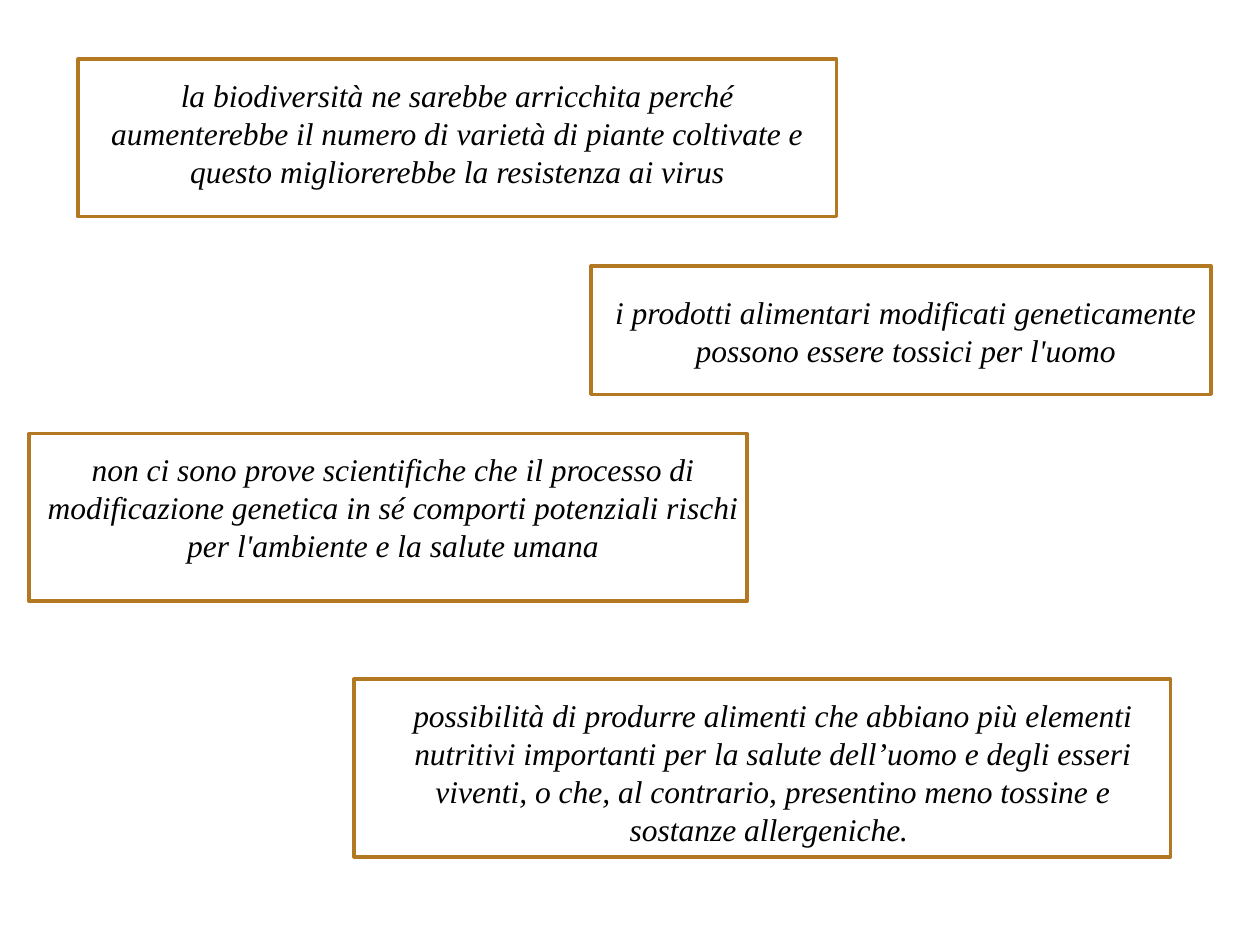
from dataclasses import dataclass

import pptx
import pptx.dml.color
import pptx.enum.shapes
import pptx.enum.text
import pptx.util

COLUMNS, ROWS = 100, 75
COLORS = {"text": "000000", "fill": "FFFFFF", "border": "B27822"}

presentation = pptx.Presentation()
presentation.slide_width = pptx.util.Inches(10)
presentation.slide_height = pptx.util.Inches(7.5)


@dataclass(frozen=True)
class Area:
    column: float
    row: float
    columns: float
    rows: float

    def lengths(self) -> tuple[int, int, int, int]:
        column_width = presentation.slide_width / COLUMNS
        row_height = presentation.slide_height / ROWS
        return (
            round(self.column * column_width),
            round(self.row * row_height),
            round(self.columns * column_width),
            round(self.rows * row_height),
        )


@dataclass(frozen=True)
class Statement:
    text: str
    frame: Area
    text_area: Area


STATEMENTS = [
    Statement(
        "la biodiversità ne sarebbe arricchita perché aumenterebbe il numero di "
        "varietà di piante coltivate e questo migliorerebbe la resistenza ai virus",
        Area(6.2, 4.7, 60.2, 12.5),
        Area(7, 5.5, 58.6, 10.1),
    ),
    Statement(
        "i prodotti alimentari modificati geneticamente possono essere tossici "
        "per l'uomo",
        Area(46.9, 21.1, 49.2, 10.2),
        Area(46.1, 22.7, 51.6, 7.1),
    ),
    Statement(
        "non ci sono prove scientifiche che il processo di modificazione genetica "
        "in sé comporti potenziali rischi per l'ambiente e la salute umana",
        Area(2.3, 34.4, 57, 13.3),
        Area(2.3, 35.2, 57.8, 10.1),
    ),
    Statement(
        "possibilità di produrre alimenti che abbiano più elementi nutritivi "
        "importanti per la salute dell’uomo e degli esseri viventi, o che, al "
        "contrario, presentino meno tossine e sostanze allergeniche. ",
        Area(28.1, 53.9, 64.8, 14.1),
        Area(30.5, 54.7, 61.7, 13.1),
    ),
]


def color(name: str) -> pptx.dml.color.RGBColor:
    return pptx.dml.color.RGBColor.from_string(COLORS[name])


def add_frame(slide: pptx.slide.Slide, area: Area) -> None:
    shape = slide.shapes.add_shape(
        pptx.enum.shapes.MSO_SHAPE.RECTANGLE, *area.lengths()
    )
    shape.shadow.inherit = False
    shape.fill.solid()
    shape.fill.fore_color.rgb = color("fill")
    shape.line.color.rgb = color("border")
    shape.line.width = pptx.util.Pt(2)


def add_text(
    slide: pptx.slide.Slide,
    text: str,
    area: Area,
    *,
    size: float = 18,
    font: str = "Times New Roman",
    italic: bool = True,
) -> None:
    text_frame = slide.shapes.add_textbox(*area.lengths()).text_frame
    text_frame.word_wrap = True
    text_frame.auto_size = pptx.enum.text.MSO_AUTO_SIZE.SHAPE_TO_FIT_TEXT
    text_frame.vertical_anchor = pptx.enum.text.MSO_ANCHOR.MIDDLE
    paragraph = text_frame.paragraphs[0]
    paragraph.alignment = pptx.enum.text.PP_ALIGN.CENTER
    run = paragraph.add_run()
    run.text = text
    run.font.name = font
    run.font.size = pptx.util.Pt(size)
    run.font.italic = italic
    run.font.color.rgb = color("text")


def main() -> None:
    slide = presentation.slides.add_slide(presentation.slide_layouts[6])
    for statement in STATEMENTS:
        add_frame(slide, statement.frame)
        add_text(slide, statement.text, statement.text_area)
    presentation.save("out.pptx")


if __name__ == "__main__":
    main()
